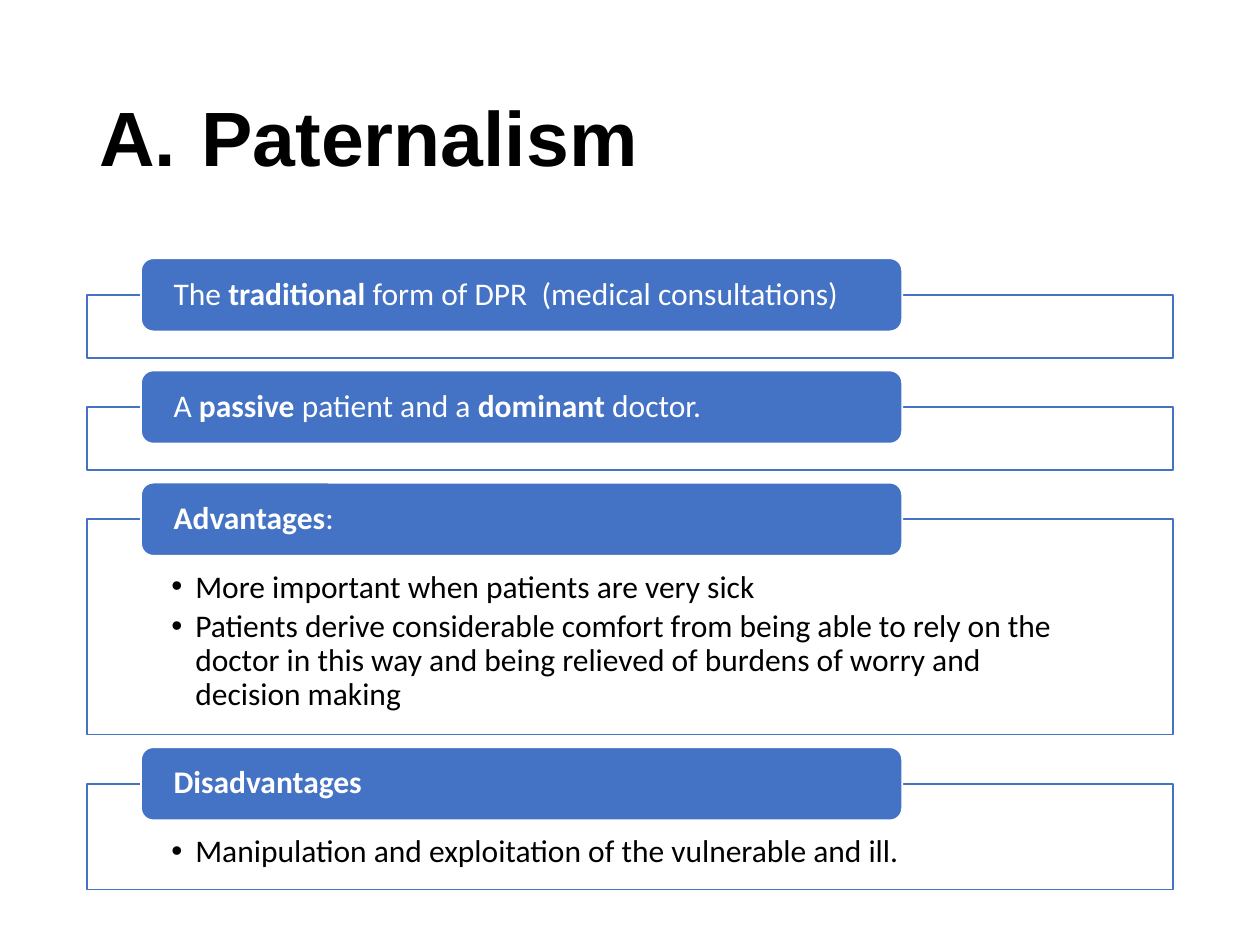
"""Build the Paternalism slide: a lettered title above four labelled panels."""
from lxml import etree
from pptx import Presentation
from pptx import util as u
from pptx.dml import color
from pptx.enum import shapes, text
from pptx.oxml import ns

TITLE = "Paternalism"
SECTIONS = [
    {"label": "The *traditional *form of DPR  (medical consultations)", "points": [], "height": 6.67},
    {"label": "A *passive* patient and a *dominant* doctor.", "points": [], "height": 6.67},
    {"label": "*Advantages*:", "height": 22.8, "points": [
        "More important when patients are very sick",
        "Patients derive considerable comfort from being able to rely on the doctor in this way "
        "and being relieved of burdens of worry and decision making"]},
    {"label": "*Disadvantages*", "height": 11.2, "points": [
        "Manipulation and exploitation of the vulnerable and ill."]},
]
THEME = {
    "accent": "4472C4", "light": "FFFFFF", "dark": "000000",
    "title": {"name": "Arial", "size": u.Pt(44)},
    "body": {"name": "Calibri", "size": u.Pt(18)},
    "line": u.Pt(1), "opacity": 90,
}
WIDTH, HEIGHT = u.Inches(10), u.Inches(7.5)
LEFT, SPAN = 6.9, 86.2
LABEL_LEFT, LABEL_SPAN, LABEL_HEIGHT = 11.2, 60.4, 7.73
TITLE_TOP, TITLE_HEIGHT = 5.33, 19.33
FIRST_TOP, GAP = 31.2, 5.2


def area(left, top, width, height):
    """Turn percentages of the slide into lengths."""
    sides = (WIDTH, HEIGHT, WIDTH, HEIGHT)
    return [u.Emu(round(side * share / 100)) for side, share in zip(sides, (left, top, width, height))]


def apply(target, values):
    """Set each named attribute on the target."""
    for name, value in values.items():
        setattr(target, name, value)


def set_frame(shape, anchor, margins):
    """Give the text frame wrapping, an anchor and margins in inches."""
    sides = ("margin_left", "margin_top", "margin_right", "margin_bottom")
    apply(shape.text_frame, {"word_wrap": True, "vertical_anchor": anchor,
                             **dict(zip(sides, map(u.Inches, margins)))})


def add_box(slide, preset, place, fill, line):
    """Add a flat shape with a solid fill and an outline."""
    shape = slide.shapes.add_shape(preset, *area(*place))
    shape.shadow.inherit = False
    shape.fill.solid()
    shape.fill.fore_color.rgb = color.RGBColor.from_string(fill)
    shape.line.color.rgb = color.RGBColor.from_string(line)
    shape.line.width = THEME["line"]
    return shape


def write(paragraph, content, style, ink):
    """Write content in runs, with bold parts between asterisks."""
    apply(paragraph, {"alignment": text.PP_ALIGN.LEFT, "line_spacing": 0.9})
    for index, part in enumerate(content.split("*")):
        if part:
            run = paragraph.add_run()
            run.text = part
            apply(run.font, {**style, "bold": index % 2 == 1})
            run.font.color.rgb = color.RGBColor.from_string(ink)


def add_marker(paragraph, indent, tag, **attributes):
    """Add a hanging bullet or number to the paragraph."""
    properties = paragraph._p.get_or_add_pPr()
    properties.set("marL", str(u.Inches(indent)))
    properties.set("indent", str(-u.Inches(indent)))
    etree.SubElement(properties, ns.qn("a:buFont"), typeface="Arial")
    etree.SubElement(properties, ns.qn(tag), **attributes)


def add_title(slide):
    """Add the lettered title."""
    box = slide.shapes.add_textbox(*area(LEFT, TITLE_TOP, SPAN, TITLE_HEIGHT))
    set_frame(box, text.MSO_ANCHOR.MIDDLE, (0.1, 0.05, 0.1, 0.05))
    paragraph = box.text_frame.paragraphs[0]
    add_marker(paragraph, 0.81, "a:buAutoNum", type="alphaUcPeriod")
    write(paragraph, f"*{TITLE}*", THEME["title"], THEME["dark"])


def add_section(slide, section, top):
    """Add a panel with its bullet points and the label on its top edge."""
    panel = add_box(slide, shapes.MSO_SHAPE.RECTANGLE, (LEFT, top, SPAN, section["height"]),
                    THEME["light"], THEME["accent"])
    fill = panel._element.spPr.find(ns.qn("a:solidFill"))
    etree.SubElement(fill[0], ns.qn("a:alpha"), val=str(THEME["opacity"] * 1000))
    set_frame(panel, text.MSO_ANCHOR.TOP, (0.67, 0.41, 0.67, 0.14))
    frame = panel.text_frame
    for index, point in enumerate(section["points"]):
        paragraph = frame.add_paragraph() if index else frame.paragraphs[0]
        add_marker(paragraph, 0.19, "a:buChar", char="•")
        write(paragraph, point, THEME["body"], THEME["dark"])
        paragraph.space_after = u.Pt(3)
    label = add_box(slide, shapes.MSO_SHAPE.ROUNDED_RECTANGLE,
                    (LABEL_LEFT, top - LABEL_HEIGHT / 2, LABEL_SPAN, LABEL_HEIGHT),
                    THEME["accent"], THEME["light"])
    set_frame(label, text.MSO_ANCHOR.MIDDLE, (0.23, 0, 0.23, 0))
    write(label.text_frame.paragraphs[0], section["label"], THEME["body"], THEME["light"])


def main():
    """Build and save the presentation."""
    presentation = Presentation()
    apply(presentation, {"slide_width": WIDTH, "slide_height": HEIGHT})
    slide = presentation.slides.add_slide(presentation.slide_layouts[6])
    add_title(slide)
    top = FIRST_TOP
    for section in SECTIONS:
        add_section(slide, section, top)
        top += section["height"] + GAP
    presentation.save("out.pptx")


if __name__ == "__main__":
    main()
